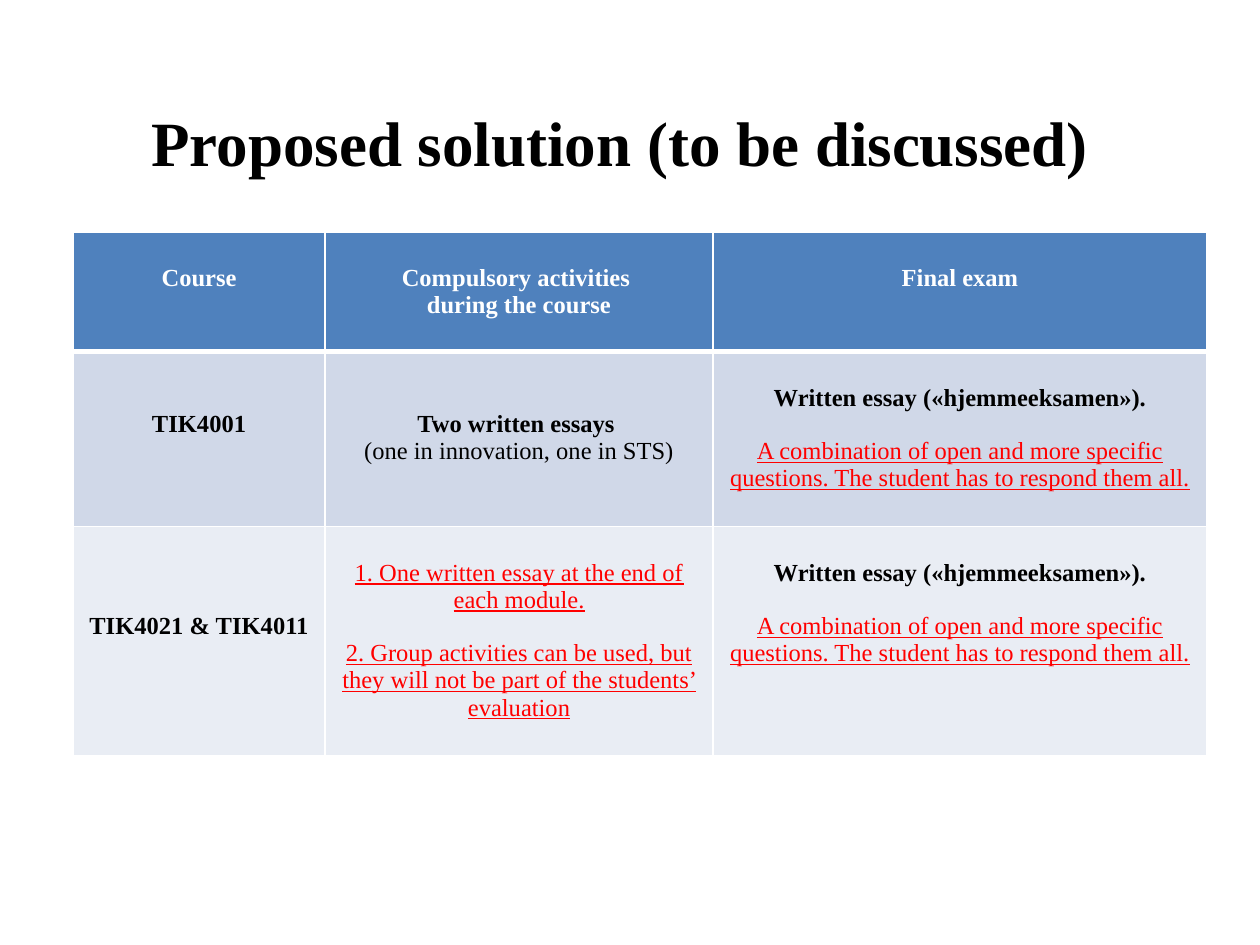
from pptx import Presentation
from pptx.dml.color import RGBColor
from pptx.enum.text import MSO_ANCHOR, PP_ALIGN
from pptx.oxml.ns import qn
from pptx.util import Inches, Pt
from lxml import etree

CENTER = PP_ALIGN.CENTER
MIDDLE = MSO_ANCHOR.MIDDLE
FONT = "Times New Roman"
COLORS = {"white": "FFFFFF", "black": "000000", "red": "FF0000",
          "head": "4F81BD", "band": "D0D8E8", "pale": "E9EDF4"}
LINE = Inches(0.21)
PAD = Inches(0.05)


def style(para, size, color, bold, under=False):
    para.alignment = CENTER
    font = para.font
    font.name, font.size = FONT, Pt(size)
    font.bold, font.underline = bold, under
    font.color.rgb = RGBColor.from_string(COLORS[color])


def add_edge(cell, side, width):
    """Draw one white border of a cell; call before the cell is filled."""
    edge = etree.SubElement(cell._tc.get_or_add_tcPr(), qn(f"a:ln{side}"), w=str(Pt(width)))
    fill = etree.SubElement(edge, qn("a:solidFill"))
    etree.SubElement(fill, qn("a:srgbClr"), val=COLORS["white"])


prs = Presentation()
prs.slide_width, prs.slide_height = Inches(10), Inches(7.5)
slide = prs.slides.add_slide(prs.slide_layouts[5])

title = slide.shapes.title
title.left, title.top = Inches(0.42), Inches(0.5)
title.width, title.height = Inches(9), Inches(1.25)
title.text_frame.text = "Proposed solution (to be discussed)"
title.text_frame.vertical_anchor = MIDDLE
style(title.text_frame.paragraphs[0], 36, "black", True)

# Looks of a paragraph: color, bold, underlined
HEAD = ("white", True, False)
BOLD = ("black", True, False)
PLAIN = ("black", False, False)
NEW = ("red", False, True)

exam = [("Written essay («hjemmeeksamen»).", BOLD, 0),
        ("A combination of open and more specific questions. "
         "The student has to respond them all.", NEW, 1)]

# Each row: fill, height, cells; each cell: lines above, (text, look, gap before)
rows = [
    ("head", 0.95, [
        (1, [("Course", HEAD, 0)]),
        (1, [("Compulsory activities ", HEAD, 0), ("during the course", HEAD, 0)]),
        (1, [("Final exam", HEAD, 0)])]),
    ("band", 1.39, [
        (2, [("TIK4001", BOLD, 0)]),
        (2, [("Two written essays ", BOLD, 0),
             ("(one in innovation, one in STS)", PLAIN, 0)]),
        (1, exam)]),
    ("pale", 1.82, [
        (3, [("TIK4021 & TIK4011", BOLD, 0)]),
        (1, [("1. One written essay at the end of each module.", NEW, 0),
             ("2. Group activities can be used, but they will not be part of "
              "the students’ evaluation", NEW, 1)]),
        (1, exam)]),
]

frame = slide.shapes.add_table(3, 3, Inches(0.58), Inches(1.84), Inches(9), Inches(4.16))
table = frame.table
for col, width in zip(table.columns, (2, 3.08, 3.92)):
    col.width = Inches(width)

for r, (fill, height, cells) in enumerate(rows):
    table.rows[r].height = Inches(height)
    for c, (above, paras) in enumerate(cells):
        cell = table.cell(r, c)
        cell.margin_top = PAD + above * LINE
        top, bottom = (3 if r == 1 else 1), (3 if r == 0 else 1)
        for side, width in zip("LRTB", (1, 1, top, bottom)):
            add_edge(cell, side, width)
        cell.fill.solid()
        cell.fill.fore_color.rgb = RGBColor.from_string(COLORS[fill])
        text = cell.text_frame
        text.text = "\n".join(para[0] for para in paras)
        for para, (_, look, gap) in zip(text.paragraphs, paras):
            style(para, 14, *look)
            para.space_before = gap * LINE

prs.save("out.pptx")
